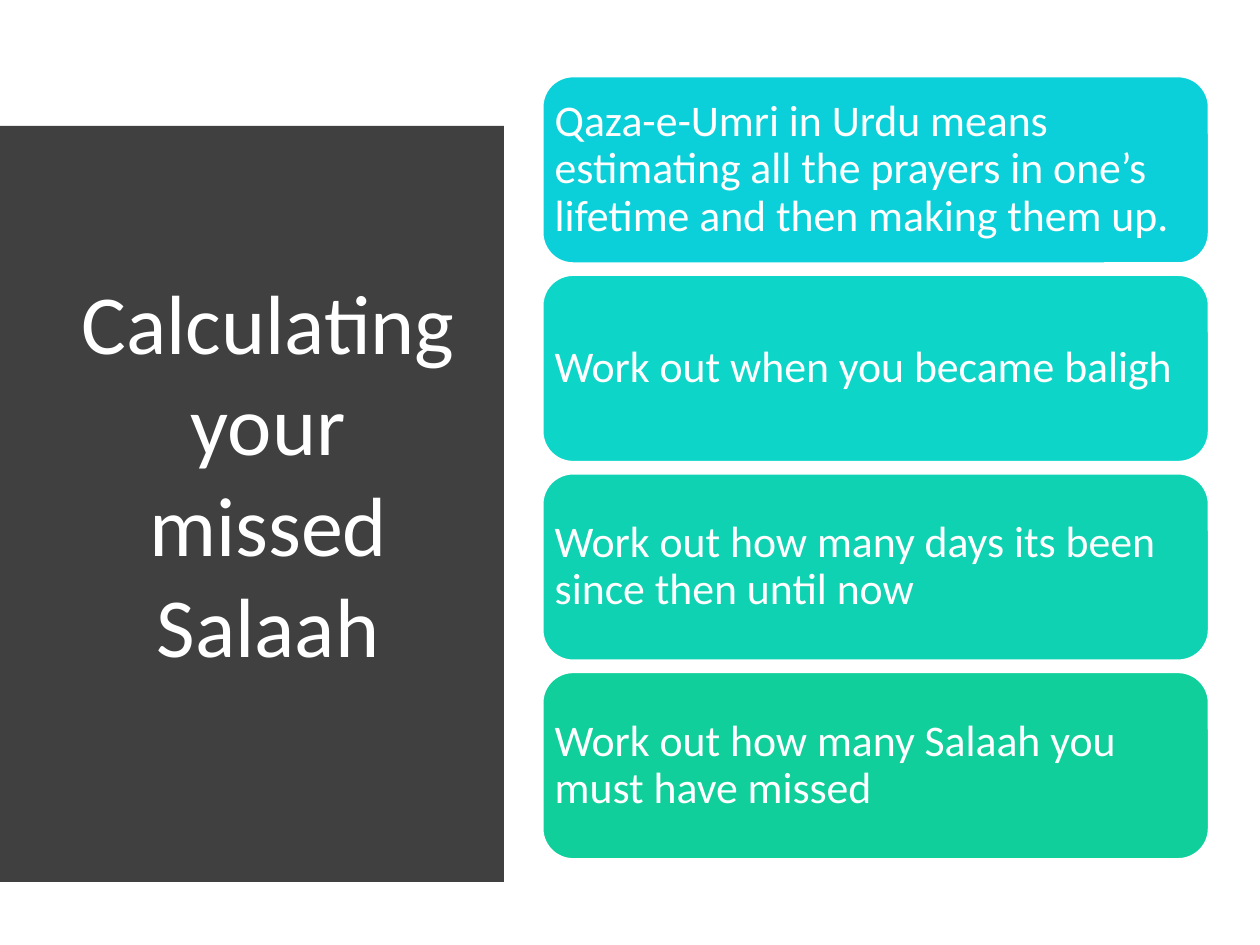
from dataclasses import dataclass

from pptx import Presentation
from pptx.dml.color import RGBColor
from pptx.enum.shapes import MSO_SHAPE
from pptx.enum.text import MSO_ANCHOR, MSO_AUTO_SIZE, PP_ALIGN
from pptx.util import Inches, Pt

ROUNDED = MSO_SHAPE.ROUNDED_RECTANGLE
MIDDLE = MSO_ANCHOR.MIDDLE
NO_FIT = MSO_AUTO_SIZE.NONE
LEFT, CENTER = PP_ALIGN.LEFT, PP_ALIGN.CENTER
TITLE_ONLY = 5


@dataclass(frozen=True)
class Theme:
    font: str = "Calibri"
    title_size: int = 48
    card_size: int = 25
    light: str = "FFFFFF"
    panel: str = "404040"
    cards: tuple = ("0BD0D9", "0DD6C9", "0ED2B2", "10CF9B")


@dataclass(frozen=True)
class Box:
    left: float
    top: float
    width: float
    height: float

    def share(self, across, down, width, height):
        return Box(self.left + across * self.width, self.top + down * self.height,
                   width * self.width, height * self.height)

    def rows(self, count, gap):
        height = (self.height - gap * (count - 1)) / count
        return [Box(self.left, self.top + row * (height + gap), self.width, height)
                for row in range(count)]

    def lengths(self):
        return [Inches(side) for side in (self.left, self.top, self.width, self.height)]


THEME = Theme()
PAGE = Box(0, 0, 10, 7.5)
TITLE = "Calculating your missed Salaah"
STEPS = (
    "Qaza-e-Umri in Urdu means estimating all the prayers in one’s lifetime "
    "and then making them up.",
    "Work out when you became baligh",
    "Work out how many days its been since then until now",
    "Work out how many Salaah you must have missed",
)


def paint(shape, color):
    shape.shadow.inherit = False
    shape.fill.solid()
    shape.fill.fore_color.rgb = RGBColor.from_string(color)


def write(shape, text, size, align=LEFT, spacing=1.0, inset=0.1, inset_y=0.05):
    frame = shape.text_frame
    frame.word_wrap = True
    frame.auto_size = NO_FIT
    frame.vertical_anchor = MIDDLE
    frame.margin_left = frame.margin_right = Inches(inset)
    frame.margin_top = frame.margin_bottom = Inches(inset_y)
    para = frame.paragraphs[0]
    para.alignment = align
    para.line_spacing = spacing
    span = para.add_run()
    span.text = text
    span.font.name = THEME.font
    span.font.size = Pt(size)
    span.font.color.rgb = RGBColor.from_string(THEME.light)


def add_title_panel(page, box, bulge=0.05, steps=40):
    straight = box.width * (1 - bulge)
    edge = [(box.left + straight + 4 * bulge * box.width * down * (1 - down),
             box.top + down * box.height)
            for down in (step / steps for step in range(steps + 1))]
    outline = page.shapes.build_freeform(box.left, box.top, scale=Inches(1))
    outline.add_line_segments(edge + [(box.left, box.top + box.height)], close=True)
    panel = outline.convert_to_shape()
    paint(panel, THEME.panel)
    panel.line.fill.background()

    title = page.shapes.title
    title.left, title.top, title.width, title.height = box.share(
        0.03, 0.09, 0.9, 0.82).lengths()
    write(title, TITLE, THEME.title_size, align=CENTER)
    panel.element.addnext(title.element)


def add_steps(page, box):
    for place, text, color in zip(box.rows(len(STEPS), 0.08), STEPS, THEME.cards):
        card = page.shapes.add_shape(ROUNDED, *place.lengths())
        paint(card, color)
        card.line.color.rgb = RGBColor.from_string(THEME.light)
        card.line.width = Pt(2)
        write(card, text, THEME.card_size, spacing=0.9, inset=0.03, inset_y=0.03)


def main():
    deck = Presentation()
    deck.slide_width, deck.slide_height = Inches(PAGE.width), Inches(PAGE.height)
    page = deck.slides.add_slide(deck.slide_layouts[TITLE_ONLY])
    add_title_panel(page, PAGE.share(0.04, 0.07, 0.36, 0.86))
    add_steps(page, PAGE.share(0.43, 0.08, 0.53, 0.83))
    deck.save("out.pptx")


if __name__ == "__main__":
    main()
